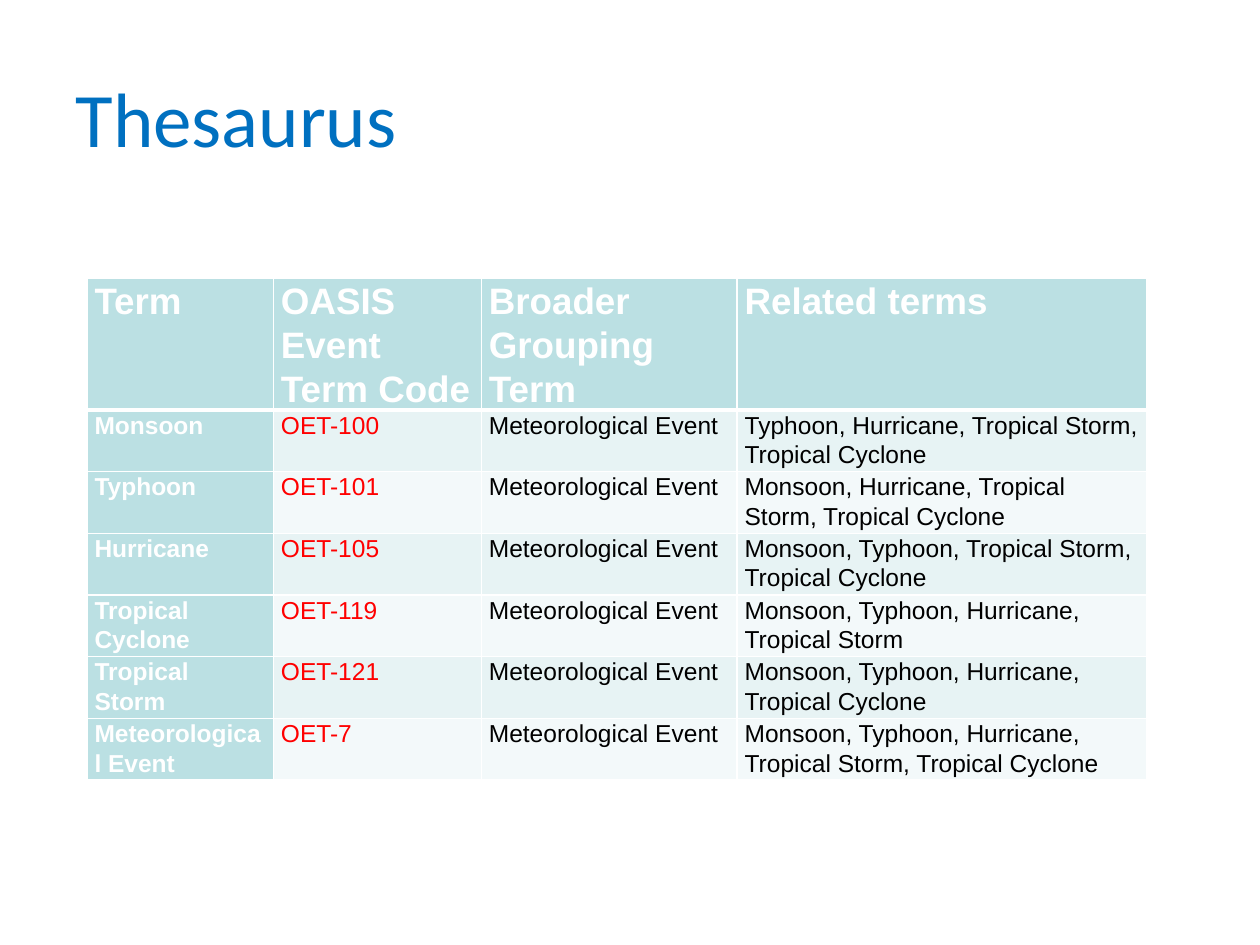
from lxml import etree
from pptx import Presentation
from pptx import util as u
from pptx.dml import color
from pptx.enum import text
from pptx.oxml import ns

COLORS = {
    "title": "0070C0",
    "heading": "BBE0E3",
    "odd": "E7F3F4",
    "even": "F3F9FA",
    "code": "FF0000",
    "body": "000000",
    "white": "FFFFFF",
}
HEADINGS = ["Term", "OASIS Event Term Code", "Broader Grouping Term", "Related terms"]
GROUP = "Meteorological Event"
ENTRIES = [
    ("Monsoon", "OET-100", "Typhoon, Hurricane, Tropical Storm, Tropical Cyclone"),
    ("Typhoon", "OET-101", "Monsoon, Hurricane, Tropical Storm, Tropical Cyclone"),
    ("Hurricane", "OET-105", "Monsoon, Typhoon, Tropical Storm, Tropical Cyclone"),
    ("Tropical Cyclone", "OET-119", "Monsoon, Typhoon, Hurricane, Tropical Storm"),
    ("Tropical Storm", "OET-121", "Monsoon, Typhoon, Hurricane, Tropical Cyclone"),
    (GROUP, "OET-7", "Monsoon, Typhoon, Hurricane, Tropical Storm, Tropical Cyclone"),
]
COLUMN_WIDTHS = [1.48, 1.65, 2.03, 3.25]
HEADING_HEIGHT = 0.81
ENTRY_HEIGHT = 0.49


def rgb(name):
    return color.RGBColor.from_string(COLORS[name])


def write(frame, words, size=14, font="Arial", ink="body", bold=False, spacing=None):
    paragraph = frame.paragraphs[0]
    paragraph.alignment = text.PP_ALIGN.LEFT
    paragraph.line_spacing = spacing
    run = paragraph.add_run()
    run.text = words
    run.font.size = u.Pt(size)
    run.font.name = font
    run.font.bold = bold
    run.font.color.rgb = rgb(ink)


def add_borders(cell, bottom=1, top=1):
    properties = cell._tc.get_or_add_tcPr()
    for side, points in (("lnL", 1), ("lnR", 1), ("lnT", top), ("lnB", bottom)):
        border = etree.SubElement(properties, ns.qn(f"a:{side}"), w=str(u.Pt(points)))
        fill = etree.SubElement(border, ns.qn("a:solidFill"))
        etree.SubElement(fill, ns.qn("a:srgbClr"), val=COLORS["white"])


def fill_cell(cell, words, fill, bottom=1, top=1, **style):
    cell.margin_left = cell.margin_right = u.Inches(0.06)
    cell.margin_top = cell.margin_bottom = 0
    add_borders(cell, bottom, top)
    cell.fill.solid()
    cell.fill.fore_color.rgb = rgb(fill)
    write(cell.text_frame, words, spacing=1.07, **style)


def add_title(slide, words):
    title = slide.shapes.title
    title.left, title.top = u.Inches(0.5), u.Inches(0.3)
    title.width, title.height = u.Inches(9), u.Inches(1.25)
    title.text_frame.vertical_anchor = text.MSO_ANCHOR.MIDDLE
    write(title.text_frame, words, size=44, font="Calibri", ink="title")


def add_thesaurus(slide):
    height = HEADING_HEIGHT + ENTRY_HEIGHT * len(ENTRIES)
    thesaurus = slide.shapes.add_table(
        len(ENTRIES) + 1, len(HEADINGS),
        u.Inches(0.69), u.Inches(2.21), u.Inches(sum(COLUMN_WIDTHS)), u.Inches(height),
    ).table
    thesaurus.first_col = True
    for column, width in zip(thesaurus.columns, COLUMN_WIDTHS):
        column.width = u.Inches(width)
    for row in thesaurus.rows:
        row.height = u.Inches(ENTRY_HEIGHT)
    thesaurus.rows[0].height = u.Inches(HEADING_HEIGHT)

    for column, heading in enumerate(HEADINGS):
        fill_cell(thesaurus.cell(0, column), heading, "heading", bottom=3,
                  size=21, ink="white", bold=True)
    for row, (term, code, related) in enumerate(ENTRIES, 1):
        band = "odd" if row % 2 else "even"
        top = 3 if row == 1 else 1
        fill_cell(thesaurus.cell(row, 0), term, "heading", top=top, ink="white", bold=True)
        fill_cell(thesaurus.cell(row, 1), code, band, top=top, ink="code")
        fill_cell(thesaurus.cell(row, 2), GROUP, band, top=top)
        fill_cell(thesaurus.cell(row, 3), related, band, top=top)


def main():
    deck = Presentation()
    deck.slide_width, deck.slide_height = u.Inches(10), u.Inches(7.5)
    slide = deck.slides.add_slide(deck.slide_layouts[5])
    add_title(slide, "Thesaurus")
    add_thesaurus(slide)
    deck.save("out.pptx")


if __name__ == "__main__":
    main()
